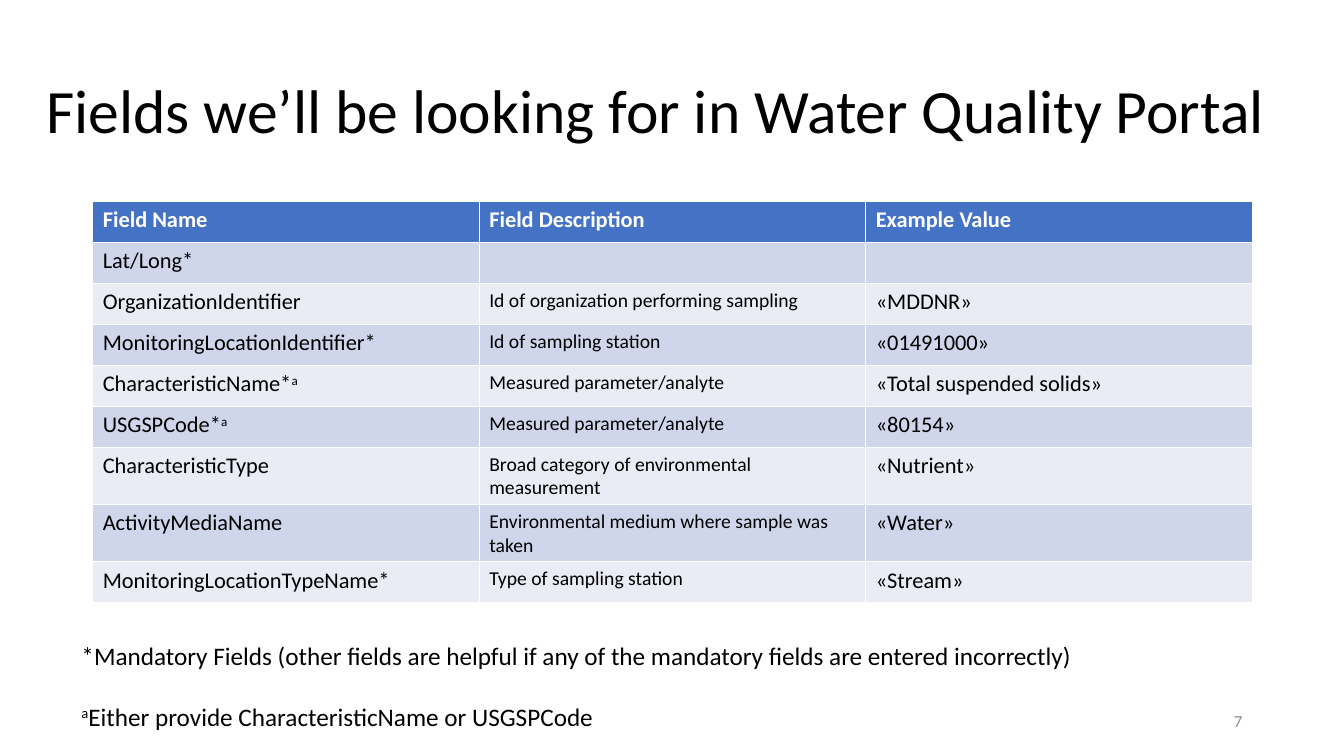
from dataclasses import dataclass

from pptx import Presentation
from pptx.dml.color import RGBColor
from pptx.enum.text import MSO_ANCHOR, PP_ALIGN
from pptx.util import Inches, Pt


@dataclass(frozen=True)
class Theme:
    font: str = "Calibri"
    ink: str = "000000"
    white: str = "FFFFFF"
    muted: str = "8C8C8C"
    header: str = "4472C4"
    bands: tuple = ("CFD5EA", "E9EBF5")
    title_size: int = 44
    note_size: int = 18
    cell_size: int = 16
    description_size: int = 14
    number_size: int = 12


THEME = Theme()
SUPERSCRIPT = "ᵃ"
HEADINGS = ("Field Name", "Field Description", "Example Value")
FIELDS = (
    ("Lat/Long*", "", ""),
    ("OrganizationIdentifier", "Id of organization performing sampling", "«MDDNR»"),
    ("MonitoringLocationIdentifier*", "Id of sampling station", "«01491000»"),
    ("CharacteristicName*ᵃ", "Measured parameter/analyte", "«Total suspended solids»"),
    ("USGSPCode*ᵃ", "Measured parameter/analyte", "«80154»"),
    ("CharacteristicType", "Broad category of environmental measurement", "«Nutrient»"),
    ("ActivityMediaName", "Environmental medium where sample was taken", "«Water»"),
    ("MonitoringLocationTypeName*", "Type of sampling station", "«Stream»"),
)
NOTES = (
    "*Mandatory Fields (other fields are helpful if any of the mandatory fields are entered incorrectly)",
    "ᵃEither provide CharacteristicName or USGSPCode",
)


def write(paragraph, text, size, color=THEME.ink, bold=False):
    paragraph.font.name = THEME.font
    paragraph.font.size = Pt(size)
    paragraph.font.bold = bold
    paragraph.font.color.rgb = RGBColor.from_string(color)
    before, mark, after = text.partition(SUPERSCRIPT)
    for part in (before, mark, after):
        if part:
            run = paragraph.add_run()
            run.text = "a" if part == SUPERSCRIPT else part
            if part == SUPERSCRIPT:
                run._r.get_or_add_rPr().set("baseline", "30000")


def add_text_frame(slide, box, anchor=MSO_ANCHOR.TOP, wrap=True):
    frame = slide.shapes.add_textbox(*map(Inches, box)).text_frame
    frame.word_wrap = wrap
    frame.vertical_anchor = anchor
    return frame


def add_title(slide, box):
    heading = add_text_frame(slide, box, MSO_ANCHOR.MIDDLE).paragraphs[0]
    heading.line_spacing = 0.9
    write(heading, "Fields we’ll be looking for in Water Quality Portal", THEME.title_size)


def add_field_table(slide, box):
    rows = (HEADINGS, *FIELDS)
    table = slide.shapes.add_table(len(rows), len(HEADINGS), *map(Inches, box)).table
    for row_index, row in enumerate(rows):
        is_header = row_index == 0
        fill = THEME.header if is_header else THEME.bands[(row_index - 1) % 2]
        color = THEME.white if is_header else THEME.ink
        for column_index, text in enumerate(row):
            is_description = column_index == 1 and not is_header
            size = THEME.description_size if is_description else THEME.cell_size
            cell = table.cell(row_index, column_index)
            cell.fill.solid()
            cell.fill.fore_color.rgb = RGBColor.from_string(fill)
            write(cell.text_frame.paragraphs[0], text, size, color, is_header)


def add_notes_below(slide, box):
    frame = add_text_frame(slide, box, wrap=False)
    for index, note in enumerate(NOTES):
        paragraph = frame.add_paragraph() if index else frame.paragraphs[0]
        paragraph.space_before = Pt(22 if index else 0)
        write(paragraph, note, THEME.note_size)


def add_slide_number(slide, box):
    number = add_text_frame(slide, box, MSO_ANCHOR.MIDDLE).paragraphs[0]
    number.alignment = PP_ALIGN.RIGHT
    write(number, "7", THEME.number_size, THEME.muted)


def main():
    presentation = Presentation()
    presentation.slide_width = Inches(13.33)
    presentation.slide_height = Inches(7.5)
    slide = presentation.slides.add_slide(presentation.slide_layouts[6])
    add_title(slide, (0.36, 0.4, 12.49, 1.45))
    add_field_table(slide, (0.92, 2, 11.5, 3.66))
    add_slide_number(slide, (9.42, 6.95, 3, 0.4))
    add_notes_below(slide, (0.71, 6.3, 10.14, 1.31))
    presentation.save("out.pptx")


if __name__ == "__main__":
    main()
